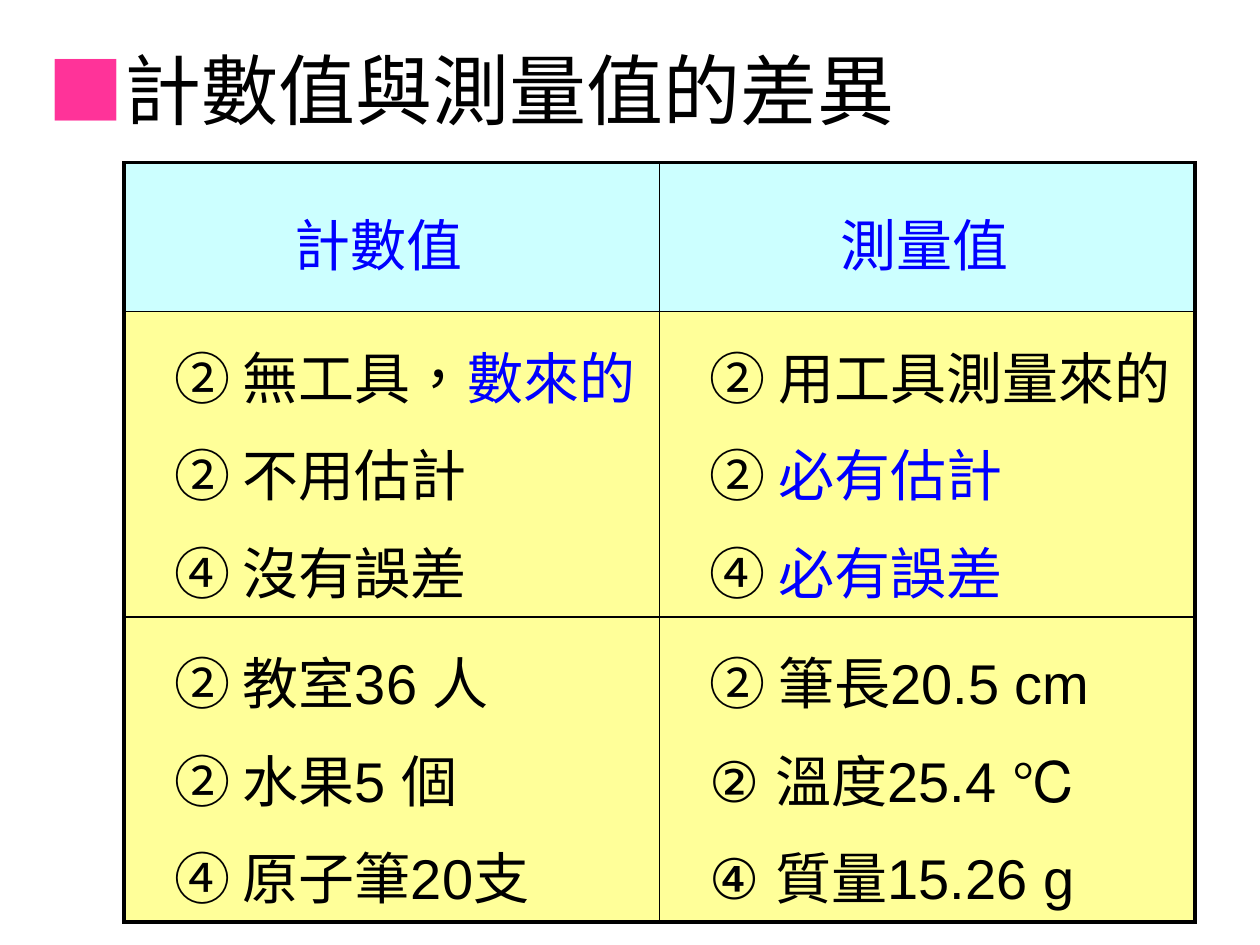
from lxml import etree
from pptx import Presentation
from pptx.dml.color import RGBColor
from pptx.enum.lang import MSO_LANGUAGE_ID
from pptx.enum.text import MSO_ANCHOR
from pptx.oxml.ns import qn
from pptx.util import Pt

MIDDLE = MSO_ANCHOR.MIDDLE
TOP = MSO_ANCHOR.TOP
CHINESE = MSO_LANGUAGE_ID.TRADITIONAL_CHINESE
BLACK, BLUE, PINK = "000000", "0000FF", "FF3399"
HEADER_FILL, BODY_FILL = "CCFFFF", "FFFF99"
OUTER, INNER = 2.25, 1
ROW_HEIGHTS = (85, 174.5, 174.5)
COLUMN_WIDTH = 306


def color(value):
    return RGBColor.from_string(value)


def write(frame, lines, size=32, font="Arial", anchor=TOP, wrap=True,
          spacing=None, before=0):
    """Write lines of (text, colour) runs as one paragraph with line breaks."""
    frame.word_wrap = wrap
    frame.vertical_anchor = anchor
    paragraph = frame.paragraphs[0]
    paragraph.space_before = Pt(before)
    if spacing:
        paragraph.line_spacing = spacing
    for number, line in enumerate(lines):
        if number:
            paragraph.add_line_break()
        for text, text_color in line:
            run = paragraph.add_run()
            run.text = text
            run.font.size = Pt(size)
            run.font.name = font
            run.font.language_id = CHINESE
            run.font.color.rgb = color(text_color)


presentation = Presentation()
presentation.slide_width, presentation.slide_height = Pt(720), Pt(540)
slide = presentation.slides.add_slide(presentation.slide_layouts[6])

# Title
title = slide.shapes.add_textbox(Pt(20), Pt(18), Pt(541), Pt(65.5))
write(title.text_frame, [[("■", PINK), ("計數值與測量值的差異", BLACK)]],
      size=44, anchor=MIDDLE)

# Comparison table; the header row is labelled by the text boxes below
rows = [
    [None, None],
    [
        [[("② 無工具，", BLACK), ("數來的", BLUE)],
         [("② 不用估計", BLACK)],
         [("④ 沒有誤差", BLACK)]],
        [[("② 用工具測量來的", BLACK)],
         [("② ", BLACK), ("必有估計", BLUE)],
         [("④ ", BLACK), ("必有誤差", BLUE)]],
    ],
    [
        [[("② 教室36 人", BLACK)],
         [("② 水果5 個", BLACK)],
         [("④ 原子筆20支", BLACK)]],
        [[("② 筆長20.5 cm", BLACK)],
         [("② 溫度25.4 ℃", BLACK)],
         [("④ 質量15.26 g", BLACK)]],
    ],
]
table = slide.shapes.add_table(3, 2, Pt(70.75), Pt(93), Pt(2 * COLUMN_WIDTH),
                               Pt(sum(ROW_HEIGHTS))).table
table.first_row = table.horz_banding = False
for column in table.columns:
    column.width = Pt(COLUMN_WIDTH)
for row, height in zip(table.rows, ROW_HEIGHTS):
    row.height = Pt(height)

for row_index, row in enumerate(rows):
    for column_index, lines in enumerate(row):
        cell = table.cell(row_index, column_index)

        # Thick outer frame, thin inner rules
        outer_sides = {"lnL": column_index == 0, "lnR": column_index == 1,
                       "lnT": row_index == 0, "lnB": row_index == 2}
        properties = cell._tc.get_or_add_tcPr()
        for side, is_outer in outer_sides.items():
            width = Pt(OUTER if is_outer else INNER)
            border = etree.SubElement(properties, qn(f"a:{side}"), w=str(width))
            fill = etree.SubElement(border, qn("a:solidFill"))
            etree.SubElement(fill, qn("a:srgbClr"), val=BLACK)

        cell.fill.solid()
        cell.fill.fore_color.rgb = color(BODY_FILL if lines else HEADER_FILL)
        if lines:
            cell.margin_left = Pt(28.75)
            cell.margin_right = Pt(7.2)
            cell.vertical_anchor = MIDDLE
            write(cell.text_frame, lines, spacing=1.2, before=6.4)

# Column headings
for left, width, heading in ((161.5, 113, "計數值"), (473, 122.5, "測量值")):
    label = slide.shapes.add_textbox(Pt(left), Pt(116.5), Pt(width), Pt(46))
    write(label.text_frame, [[(heading, BLUE)]], font="Comic Neue", wrap=False,
          before=16)

presentation.save("out.pptx")
